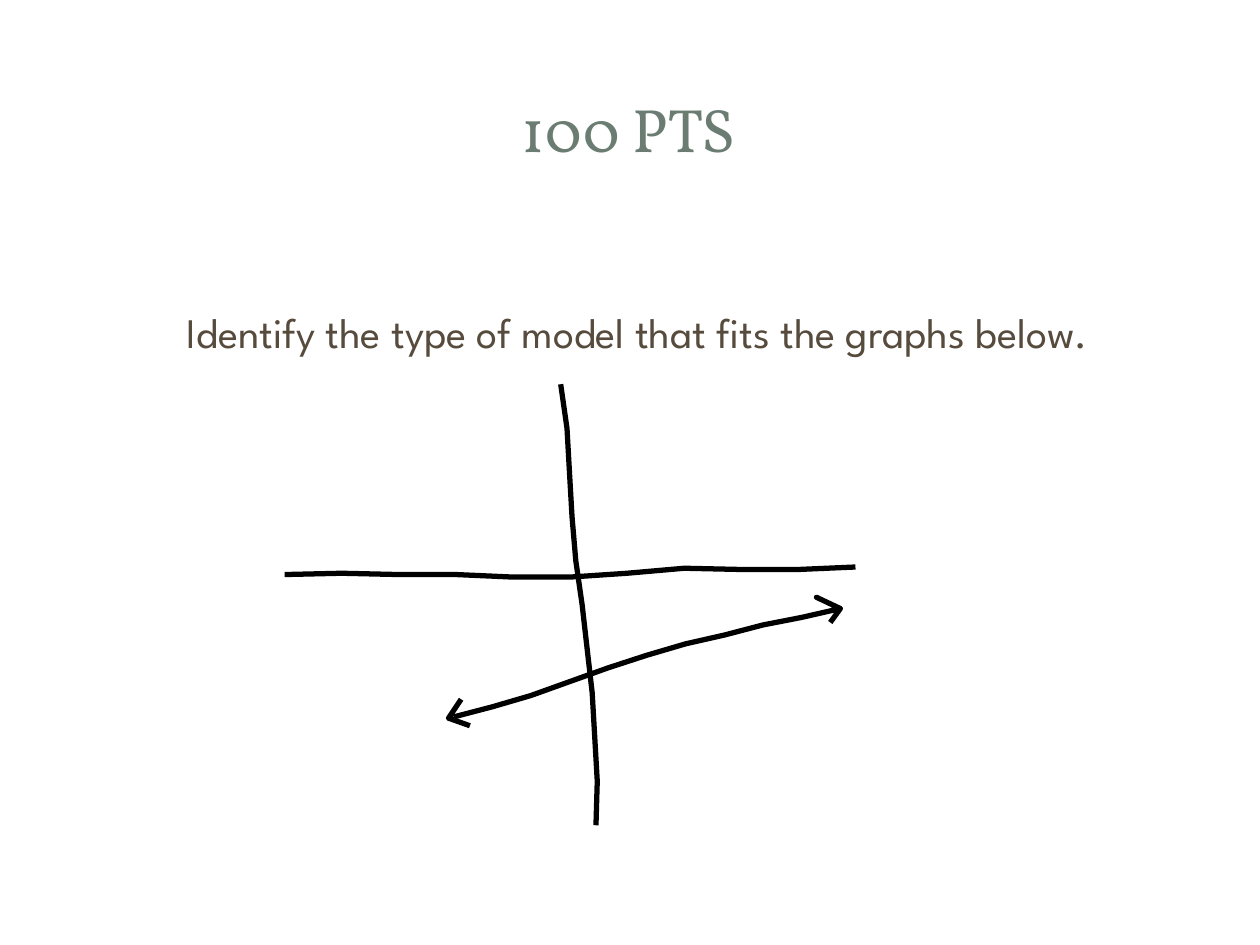
from pptx import Presentation
from pptx.dml.color import RGBColor
from pptx.enum.text import MSO_ANCHOR, PP_ALIGN
from pptx.util import Inches, Pt

COLORS = {"title": "6B7D72", "body": "564B3C", "ink": "000000"}

X_SPAN = (2.26, 6.79)
X_SWAY = [4.56, 4.55, 4.56, 4.56, 4.58, 4.58, 4.55, 4.51, 4.52, 4.52, 4.5]
Y_SPAN = (3.05, 6.55)
Y_SWAY = [4.45, 4.5, 4.52, 4.54, 4.57, 4.62, 4.66, 4.7, 4.72, 4.74, 4.73]
TREND_SPAN = (3.6, 6.67)
TREND_RISE = [5.69, 5.61, 5.52, 5.41, 5.3, 5.2, 5.11, 5.04, 4.96, 4.9, 4.83]
LEFT_BARBS = [(0.1, -0.15), (0.17, 0.06)]
RIGHT_BARBS = [(-0.19, -0.09), (-0.08, 0.11)]


def add_text(slide, text, box, *, font, size, color,
             anchor=MSO_ANCHOR.TOP, left=0.1, top=0.05):
    frame = slide.shapes.add_textbox(*map(Inches, box)).text_frame
    frame.word_wrap = True
    frame.vertical_anchor = anchor
    frame.margin_left = Inches(left)
    frame.margin_top = Inches(top)
    para = frame.paragraphs[0]
    para.alignment = PP_ALIGN.CENTER
    run = para.add_run()
    run.text = text
    run.font.name = font
    run.font.size = Pt(size)
    run.font.color.rgb = RGBColor.from_string(COLORS[color])


def spread(span, values):
    first, last = span
    step = (last - first) / (len(values) - 1)
    return [(first + i * step, value) for i, value in enumerate(values)]


def arrow_head(tip, barbs):
    x, y = tip
    upper, lower = [(x + dx, y + dy) for dx, dy in barbs]
    return [upper, tip, lower]


def add_stroke(slide, points):
    start, *rest = [(Inches(x), Inches(y)) for x, y in points]
    pen = slide.shapes.build_freeform(*start)
    pen.add_line_segments(rest, close=False)
    shape = pen.convert_to_shape()
    shape.shadow.inherit = False
    shape.fill.background()
    shape.line.color.rgb = RGBColor.from_string(COLORS["ink"])
    shape.line.width = Pt(3)


def add_graph(slide):
    y_axis = [(x, y) for y, x in spread(Y_SPAN, Y_SWAY)]
    x_axis = spread(X_SPAN, X_SWAY)
    trend = spread(TREND_SPAN, TREND_RISE)
    right_head = arrow_head(trend[-1], RIGHT_BARBS)
    left_head = arrow_head((3.56, 5.7), LEFT_BARBS)
    for points in (y_axis, x_axis, trend + right_head, left_head):
        add_stroke(slide, points)


def main():
    deck = Presentation()
    deck.slide_width = Inches(10)
    deck.slide_height = Inches(7.5)
    slide = deck.slides.add_slide(deck.slide_layouts[6])
    add_text(slide, "100 PTS", (0.47, 0.45, 9.03, 1.14), font="Vollkorn",
             size=35, color="title", anchor=MSO_ANCHOR.MIDDLE)
    add_text(slide, "Identify the type of model that fits the graphs below.",
             (0.5, 1.92, 9, 4.78), font="League Spartan", size=24,
             color="body", left=0.22, top=0.51)
    add_graph(slide)
    deck.save("out.pptx")


if __name__ == "__main__":
    main()
